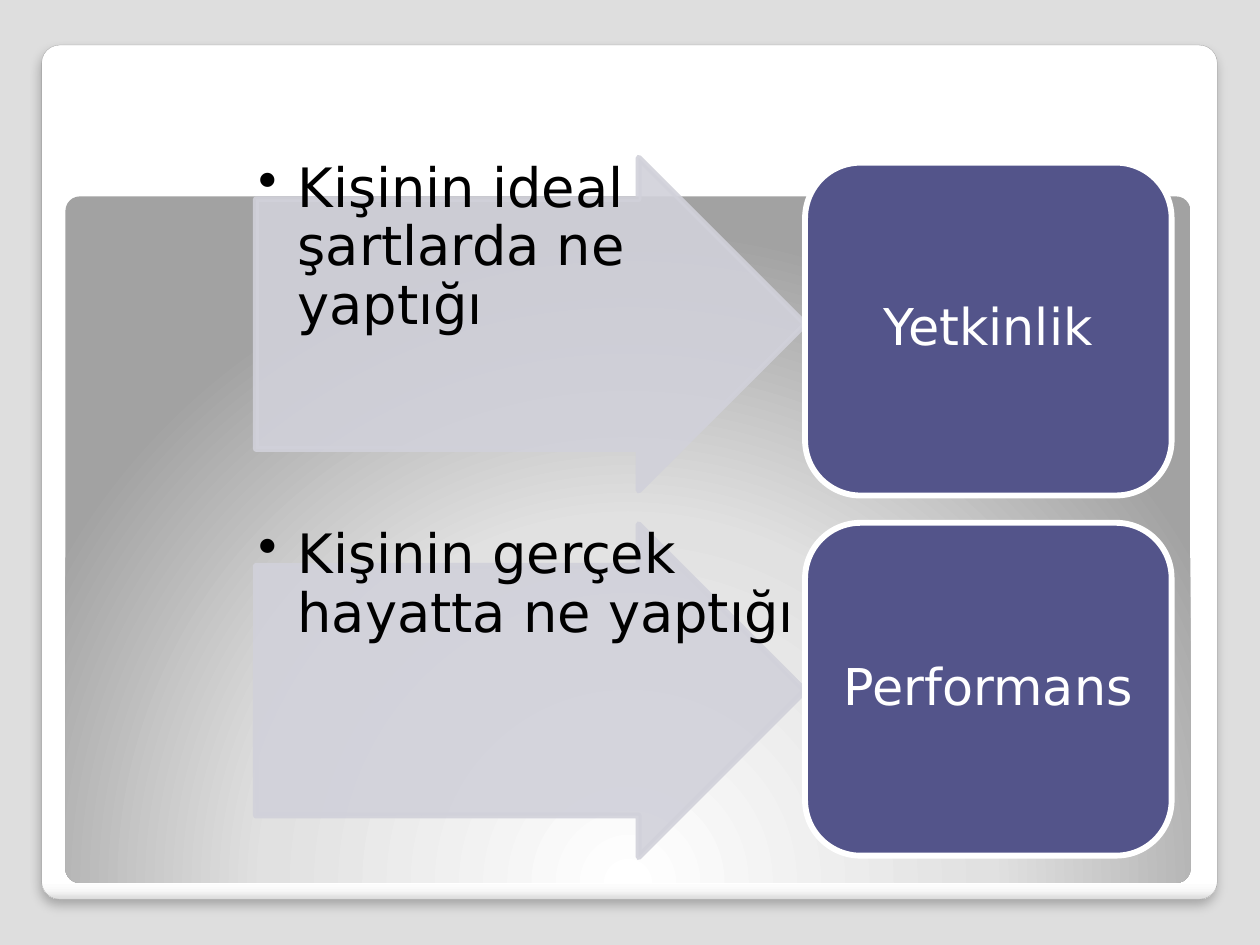
from dataclasses import dataclass

from lxml import etree
from pptx import Presentation
from pptx.dml.color import RGBColor
from pptx.enum.shapes import MSO_SHAPE as Shape
from pptx.enum.text import MSO_ANCHOR as Anchor, PP_ALIGN as Align
from pptx.oxml import parse_xml
from pptx.oxml.ns import nsdecls, qn
from pptx.util import Cm, Pt


@dataclass(frozen=True)
class Theme:
    font: str = "DejaVu Sans"
    background: str = "DEDEDE"
    card_line: str = "A4A4A4"
    arrow: str = "D1D1DA"
    box: str = "53548A"
    white: str = "FFFFFF"
    black: str = "000000"
    arrow_size: int = 31
    box_size: int = 29
    outline: float = 3.35
    card_stops: tuple = ((0, "FFFFFF"), (98, "FFFFFF"), (99, "F7F7F7"), (100, "DADADA"))
    panel_stops: tuple = ((0, "FFFFFF"), (55, "E1E1E1"), (100, "A2A2A2"))


def add_block(page, kind, frame, fill, line, width):
    block = page.shapes.add_shape(kind, *map(Cm, frame))
    block.shadow.inherit = False
    if isinstance(fill, str):
        block.fill.solid()
        block.fill.fore_color.rgb = RGBColor.from_string(fill)
    else:
        stops, direction = fill
        marks = "".join(
            f'<a:gs pos="{place * 1000}"><a:srgbClr val="{color}"/></a:gs>'
            for place, color in stops
        )
        gradient = parse_xml(
            f'<a:gradFill {nsdecls("a")} rotWithShape="1">'
            f"<a:gsLst>{marks}</a:gsLst>{direction}</a:gradFill>"
        )
        block._element.spPr.find(qn("a:prstGeom")).addnext(gradient)
    if line:
        block.line.color.rgb = RGBColor.from_string(line)
        block.line.width = Pt(width)
    else:
        block.line.fill.background()
    return block


def write_text(shape, text, size, color, insets):
    frame = shape.text_frame
    frame.word_wrap = True
    frame.margin_left = frame.margin_right = Cm(insets[0])
    frame.margin_top = frame.margin_bottom = Cm(insets[1])
    frame.text = text
    para = frame.paragraphs[0]
    para.line_spacing = 0.9
    span = para.runs[0]
    span.font.name = theme.font
    span.font.size = Pt(size)
    span.font.color.rgb = RGBColor.from_string(color)
    return para


theme = Theme()
deck = Presentation()
deck.slide_width, deck.slide_height = Cm(25.4), Cm(19.05)
page = deck.slides.add_slide(deck.slide_layouts[6])
page.background.fill.solid()
page.background.fill.fore_color.rgb = RGBColor.from_string(theme.background)

downward = '<a:lin ang="5400000" scaled="0"/>'
from_below = (
    '<a:path path="circle"><a:fillToRect l="50000" t="175000" r="50000" b="-75000"/></a:path>'
)
card = add_block(page, Shape.ROUNDED_RECTANGLE, (0.84, 0.91, 23.7, 17.22),
                 (theme.card_stops, downward), theme.card_line, 0.16)
panel = add_block(page, Shape.ROUNDED_RECTANGLE, (1.32, 3.96, 22.68, 13.84),
                  (theme.panel_stops, from_below), None, 0)
card.adjustments[0] = panel.adjustments[0] = 0.021
card._element.spPr.find(qn("a:effectLst")).append(parse_xml(
    f'<a:outerShdw {nsdecls("a")} blurRad="{Pt(6)}" dist="{Pt(4)}" dir="5400000" '
    f'algn="tl" rotWithShape="0"><a:srgbClr val="{theme.black}">'
    '<a:alpha val="25000"/></a:srgbClr></a:outerShdw>'
))

rows = (
    ("Kişinin ideal şartlarda ne yaptığı", "Yetkinlik", 3.18, 3.28),
    ("Kişinin gerçek hayatta ne yaptığı", "Performans", 10.57, 10.54),
)
for detail, name, arrow_top, box_top in rows:
    arrow_frame = (5.16, arrow_top, 11.07, 6.71)
    arrow = add_block(page, Shape.RIGHT_ARROW, arrow_frame,
                      theme.arrow, theme.arrow, theme.outline)
    arrow.adjustments[0], arrow.adjustments[1] = 0.75, 0.5
    for color in arrow._element.spPr.iter(qn("a:srgbClr")):
        etree.SubElement(color, qn("a:alpha")).set("val", "90000")

    note = page.shapes.add_textbox(*map(Cm, arrow_frame))
    para = write_text(note, detail, theme.arrow_size, theme.black, (0.05, 0.05))
    properties = para._p.get_or_add_pPr()
    properties.set("marL", str(Cm(0.79)))
    properties.set("indent", str(-Cm(0.79)))
    etree.SubElement(properties, qn("a:buChar")).set("char", "•")

    box = add_block(page, Shape.ROUNDED_RECTANGLE, (16.23, box_top, 7.39, 6.71),
                    theme.box, theme.white, theme.outline)
    para = write_text(box, name, theme.box_size, theme.white, (0, 0))
    para.alignment = Align.CENTER
    box.text_frame.vertical_anchor = Anchor.MIDDLE

deck.save("out.pptx")
